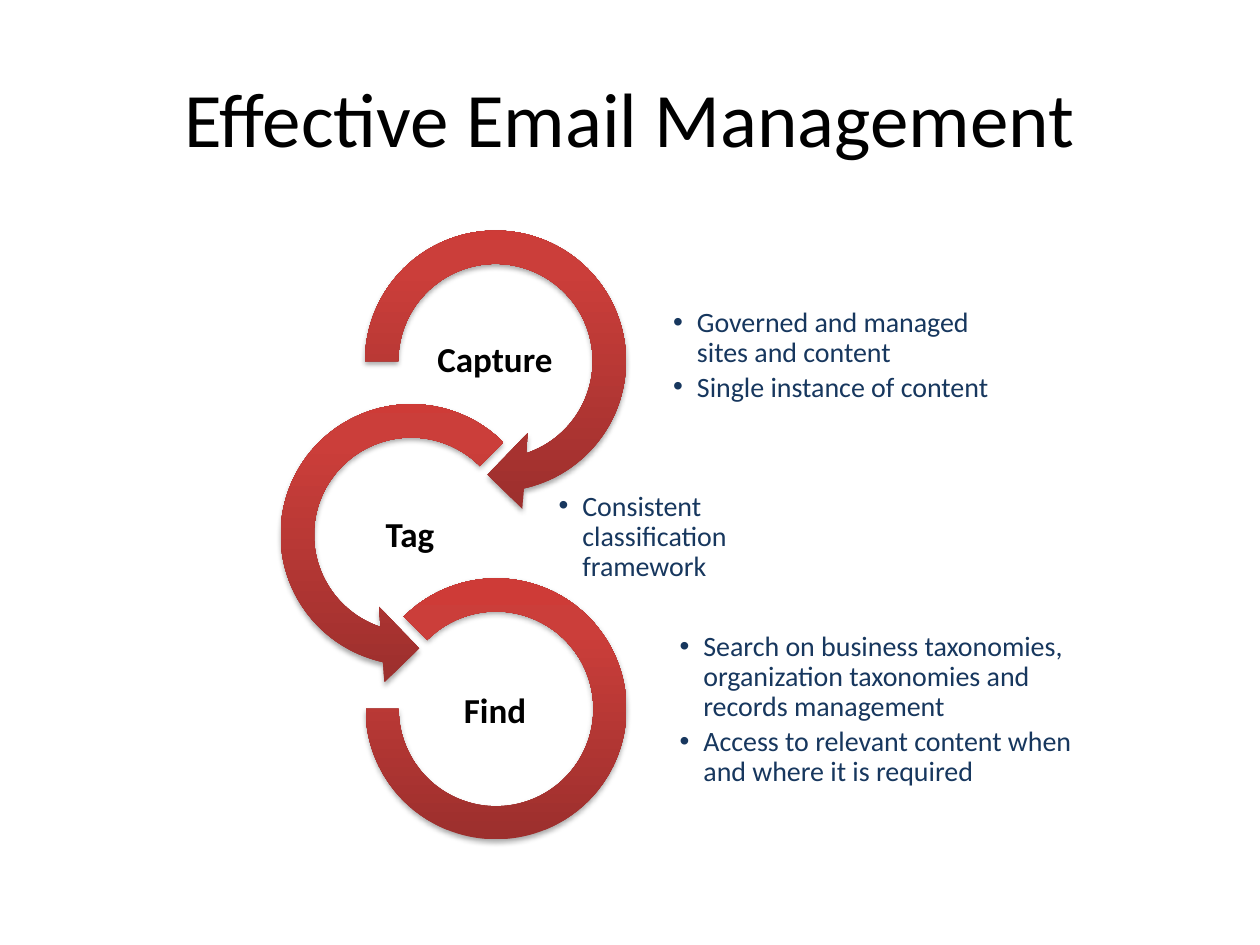
from copy import deepcopy
from dataclasses import dataclass

from lxml.etree import SubElement
from pptx import Presentation
from pptx.dml.color import RGBColor as RGB
from pptx.enum.shapes import MSO_SHAPE as Shape
from pptx.enum.text import MSO_ANCHOR as Anchor, MSO_AUTO_SIZE as Fit, PP_ALIGN as Align
from pptx.oxml.ns import qn
from pptx.util import Cm, Pt


@dataclass(frozen=True)
class Theme:
    font: str = "Calibri"
    black: RGB = RGB(0, 0, 0)
    navy: RGB = RGB.from_string("17375E")
    reds: tuple = ((0, "9C2F2D"), (0.8, "CB3E3A"), (1, "CE3B37"))
    title: Pt = Pt(44)
    label: Pt = Pt(20)
    list: Pt = Pt(16)


theme = Theme()


def assign(item, values):
    for name, value in values.items():
        setattr(item, name, value)


def write(box, place, lines, font, para, pad=0.03):
    """Place a text box and fill it, one paragraph a line."""
    assign(box, dict(zip(("left", "top", "width", "height"), map(Cm, place))))
    frame = box.text_frame
    assign(frame, {"word_wrap": True, "auto_size": Fit.NONE,
                   "vertical_anchor": Anchor.MIDDLE})
    assign(frame, {f"margin_{side}": Cm(pad)
                   for side in ("left", "right", "top", "bottom")})
    frame.text = "\n".join(lines)
    for p in frame.paragraphs:
        assign(p, {"space_before": Pt(0), **para})
        font_set = {"name": theme.font, "bold": False, **font}
        color = font_set.pop("color")
        assign(p.runs[0].font, font_set)
        p.runs[0].font.color.rgb = color
    return frame


deck = Presentation()
assign(deck, {"slide_width": Cm(25.4), "slide_height": Cm(19.05)})
slide = deck.slides.add_slide(deck.slide_layouts.get_by_name("Comparison"))
holders = {h.placeholder_format.idx: h for h in slide.placeholders}

# Title
write(slide.shapes.title, (1.27, 0.76, 22.86, 3.18), ["Effective Email Management"],
      {"size": theme.title, "color": theme.black}, {"alignment": Align.CENTER}, 0.25)

# Chain of rings: shape, left, top, size, adjustments
rings = [
    (Shape.CIRCULAR_ARROW, 6.93, 4.22, 6.12, (0.11, 11.42, 45, 108, 0.125)),
    (Shape.LEFT_CIRCULAR_ARROW, 5.23, 7.72, 6.12, (0.11, 11.42, 63, 189, 0.125)),
    (Shape.BLOCK_ARC, 7.37, 11.66, 5.26, (135, 108, 0.127)),
]
for kind, left, top, size, bends in rings:
    ring = slide.shapes.add_shape(kind, Cm(left), Cm(top), Cm(size), Cm(size))
    for i, bend in enumerate(bends):
        ring.adjustments[i] = bend
    ring.line.fill.background()

    # Three-stop gradient, dark at the bottom
    ring.fill.gradient()
    ring.fill.gradient_angle = 90
    props = ring._element.spPr
    stops = props.find(".//" + qn("a:gsLst"))
    stops.append(deepcopy(stops[-1]))
    for stop, (spot, red) in zip(ring.fill.gradient_stops, theme.reds):
        stop.position = spot
        stop.color.rgb = RGB.from_string(red)

    # Soft shadow below
    ring.shadow.inherit = False
    shade = SubElement(props.find(qn("a:effectLst")), qn("a:outerShdw"),
                       blurRad="40000", dist="23000", dir="5400000", rotWithShape="0")
    tint = SubElement(shade, qn("a:srgbClr"), val="000000")
    SubElement(tint, qn("a:alpha"), val="35000")

# Ring labels
labels = [("Capture", 8.28, 6.43, 3.4), ("Tag", 6.32, 9.96, 3.89), ("Find", 8.28, 13.51, 3.4)]
for word, left, top, width in labels:
    write(slide.shapes.add_textbox(0, 0, 0, 0), (left, top, width, 1.7), [word],
          {"size": theme.label, "color": theme.black, "bold": True},
          {"alignment": Align.CENTER, "line_spacing": 0.9, "space_after": Pt(7)})

# Bulleted lists: placeholder, place, lines
lists = [
    (2, (13.54, 5.94, 6.99, 2.46),
     ["Governed and managed sites and content", "Single instance of content"]),
    (1, (11.23, 9.6, 5.66, 2.46), ["Consistent classification framework"]),
    (4, (13.67, 12.57, 8.64, 3.48),
     ["Search on business taxonomies, organization taxonomies and records management",
      "Access to relevant content when and where it is required"]),
]
for idx, place, lines in lists:
    frame = write(holders[idx], place, lines,
                  {"size": theme.list, "color": theme.navy},
                  {"level": 1, "alignment": Align.LEFT,
                   "line_spacing": 0.9, "space_after": Pt(2.4)})
    for p in frame.paragraphs:
        props = p._p.get_or_add_pPr()
        props.set("marL", str(Cm(0.48)))
        props.set("indent", str(-Cm(0.48)))
        SubElement(props, qn("a:buFont"), typeface="Arial")
        SubElement(props, qn("a:buChar"), char="•")

# Unused placeholder
spare = holders[3]._element
spare.getparent().remove(spare)

deck.save("out.pptx")
